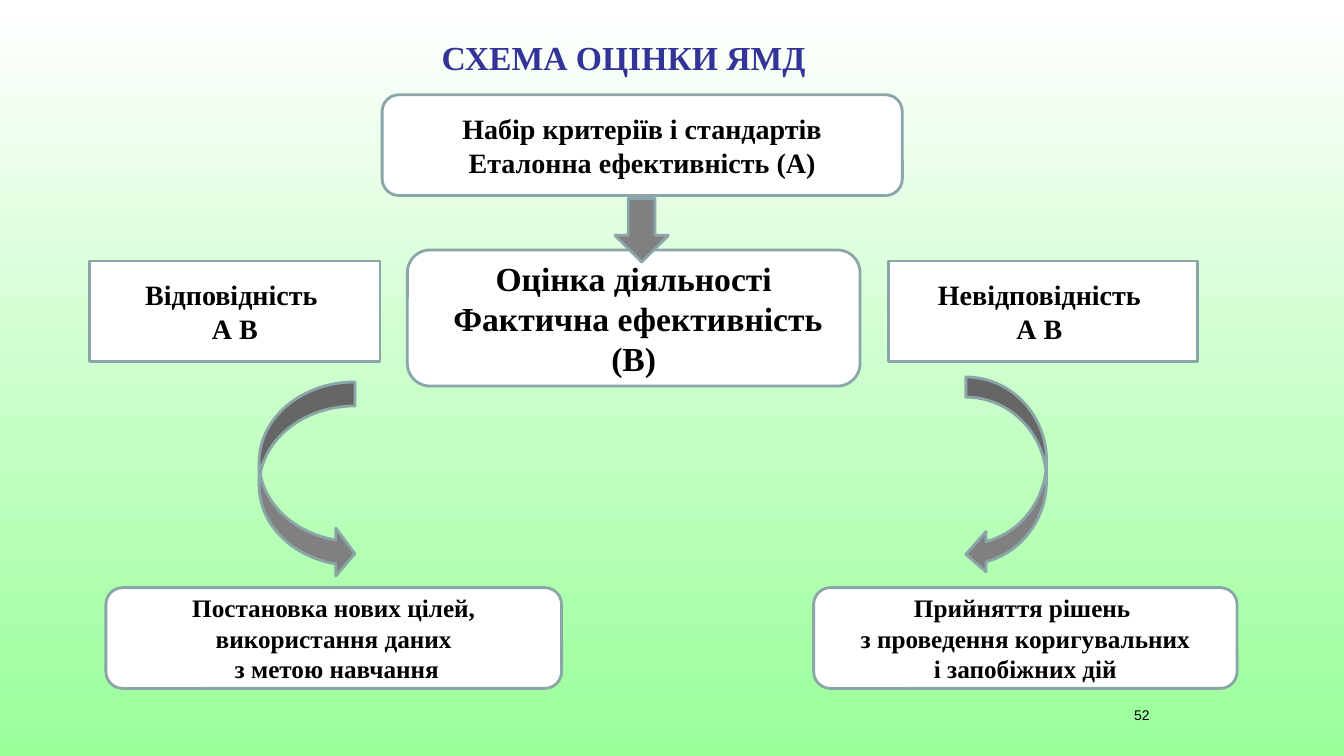
from dataclasses import dataclass

from pptx import Presentation
from pptx.dml.color import RGBColor
from pptx.enum.shapes import MSO_SHAPE as Shape
from pptx.enum.text import MSO_ANCHOR as Anchor, PP_ALIGN as Align
from pptx.util import Inches, Pt


@dataclass(frozen=True)
class Theme:
    sky: str = "FFFFFF"
    meadow: str = "99FF99"
    heading: str = "333399"
    ink: str = "000000"
    box: str = "FFFFFF"
    arrow: str = "808080"
    outline: str = "8AA6A8"
    outline_width: float = 2
    serif: str = "Times New Roman"
    sans: str = "Arial"
    large: int = 24
    medium: int = 20
    small: int = 18
    tiny: int = 10


THEME = Theme()
BOX_HEIGHT = 1
SIDE_TOP = 2.59
OUTCOME_TOP = 5.83


def rgb(value):
    return RGBColor.from_string(value)


def write(frame, *lines, size, color=THEME.ink, font=THEME.serif, bold=True,
          align=Align.CENTER, anchor=Anchor.MIDDLE):
    """Fill a text frame with one paragraph per line."""
    frame.word_wrap = True
    frame.vertical_anchor = anchor
    for number, line in enumerate(lines):
        paragraph = frame.add_paragraph() if number else frame.paragraphs[0]
        paragraph.alignment = align
        run = paragraph.add_run()
        run.text = line
        run.font.name = font
        run.font.size = Pt(size)
        run.font.bold = bold
        run.font.color.rgb = rgb(color)


def add_outlined(slide, kind, bounds, fill):
    figure = slide.shapes.add_shape(kind, *map(Inches, bounds))
    figure.shadow.inherit = False
    figure.fill.solid()
    figure.fill.fore_color.rgb = rgb(fill)
    figure.line.color.rgb = rgb(THEME.outline)
    figure.line.width = Pt(THEME.outline_width)
    return figure


def add_box(slide, kind, bounds, *lines, size):
    box = add_outlined(slide, kind, bounds, THEME.box)
    write(box.text_frame, *lines, size=size)


def add_arrow(slide, kind, bounds, adjustments=()):
    arrow = add_outlined(slide, kind, bounds, THEME.arrow)
    for index, value in enumerate(adjustments):
        arrow.adjustments[index] = value


def paint_background(slide):
    fill = slide.background.fill
    fill.gradient()
    fill.gradient_angle = 270
    for stop, color in zip(fill.gradient_stops, (THEME.sky, THEME.meadow)):
        stop.color.rgb = rgb(color)


def add_title(slide, text):
    title = slide.shapes.title
    title.left, title.top, title.width, title.height = map(
        Inches, (1.83, 0.19, 8.71, 0.76))
    write(title.text_frame, text, size=THEME.large, color=THEME.heading)


def add_page_number(slide, number):
    page = slide.shapes.add_textbox(*map(Inches, (9.42, 6.96, 2.08, 0.5)))
    write(page.text_frame, number, size=THEME.tiny, font=THEME.sans,
          bold=False, align=Align.RIGHT, anchor=Anchor.TOP)


def main():
    deck = Presentation()
    deck.slide_width, deck.slide_height = Inches(13.33), Inches(7.5)
    slide = deck.slides.add_slide(deck.slide_layouts[5])
    paint_background(slide)
    add_title(slide, "СХЕМА ОЦІНКИ ЯМД")

    rounded, plain = Shape.ROUNDED_RECTANGLE, Shape.RECTANGLE
    add_box(slide, rounded, (3.79, 0.94, 5.16, BOX_HEIGHT),
            "Набір критеріїв і стандартів", "Еталонна ефективність (А)",
            size=THEME.medium)
    add_box(slide, rounded, (4.04, 2.48, 4.49, 1.35),
            "Оцінка діяльності", " Фактична ефективність (В)",
            size=THEME.large)
    add_box(slide, rounded, (8.07, OUTCOME_TOP, 4.2, BOX_HEIGHT),
            "Прийняття рішень ", "з проведення коригувальних",
            " і запобіжних дій ", size=THEME.small)
    add_box(slide, rounded, (1.05, OUTCOME_TOP, 4.52, BOX_HEIGHT),
            "Постановка нових цілей, використання даних",
            " з метою навчання", size=THEME.small)

    add_arrow(slide, Shape.DOWN_ARROW, (6.1, 1.97, 0.53, 0.63))
    add_arrow(slide, Shape.CURVED_RIGHT_ARROW, (2.57, 3.79, 0.95, 1.94),
              (0.25, 0.5, 0.2))
    add_arrow(slide, Shape.CURVED_LEFT_ARROW, (9.58, 3.74, 0.8, 1.96))

    add_box(slide, plain, (0.89, SIDE_TOP, 2.88, BOX_HEIGHT),
            "Відповідність ", "А В", size=THEME.medium)
    add_box(slide, plain, (8.81, SIDE_TOP, 3.07, BOX_HEIGHT),
            "Невідповідність ", "А В ", size=THEME.medium)
    add_page_number(slide, "52")
    deck.save("out.pptx")


if __name__ == "__main__":
    main()
